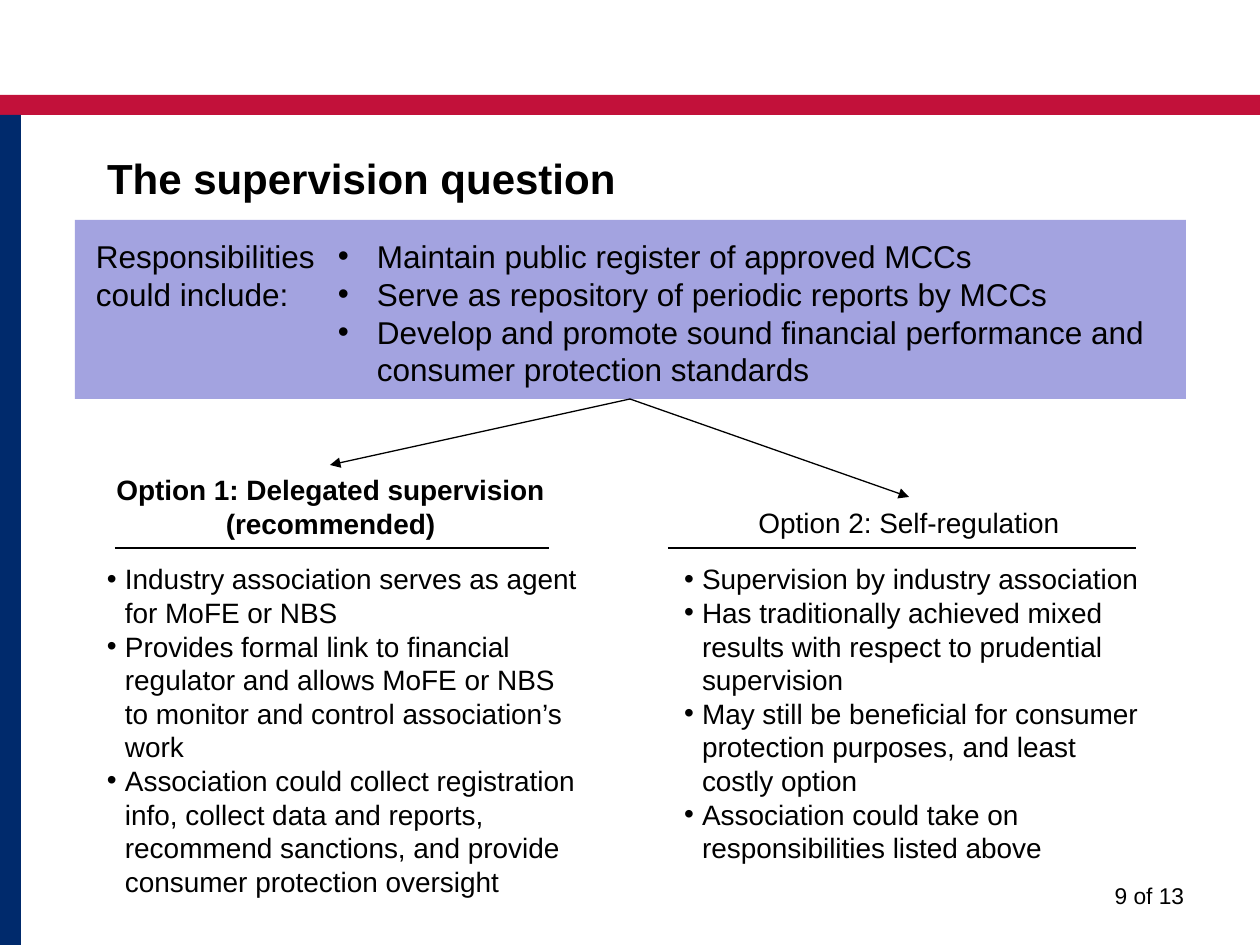
from lxml import etree
from pptx import Presentation
from pptx.dml.color import RGBColor
from pptx.enum.shapes import MSO_CONNECTOR, MSO_SHAPE
from pptx.enum.text import MSO_ANCHOR, PP_ALIGN
from pptx.oxml.ns import qn
from pptx.util import Pt

PX = 914400 / 126
LEFT, CENTER, RIGHT = PP_ALIGN.LEFT, PP_ALIGN.CENTER, PP_ALIGN.RIGHT
TOP, MIDDLE, BOTTOM = MSO_ANCHOR.TOP, MSO_ANCHOR.MIDDLE, MSO_ANCHOR.BOTTOM
RECT, STRAIGHT = MSO_SHAPE.RECTANGLE, MSO_CONNECTOR.STRAIGHT
TITLE_ONLY = 5

RESPONSIBILITIES = [
    "Maintain public register of approved MCCs",
    "Serve as repository of periodic reports by MCCs",
    "Develop and promote sound financial performance and consumer protection standards",
]
DELEGATED = [
    "Industry association serves as agent for MoFE or NBS",
    "Provides formal link to financial regulator and allows MoFE or NBS to monitor "
    "and control association’s work",
    "Association could collect registration info, collect data and reports, recommend "
    "sanctions, and provide consumer protection oversight",
]
SELF_REGULATION = [
    "Supervision by industry association",
    "Has traditionally achieved mixed results with respect to prudential supervision",
    "May still be beneficial for consumer protection purposes, and least costly option",
    "Association could take on responsibilities listed above",
]


def emu(px):
    return round(px * PX)


def rgb(value):
    return RGBColor.from_string(value)


def add_bullet(p, indent):
    """Hang the paragraph's text by indent px behind a round bullet."""
    pPr = p._p.get_or_add_pPr()
    pPr.set("marL", str(emu(indent)))
    pPr.set("indent", str(-emu(indent)))
    etree.SubElement(pPr, qn("a:buFont")).set("typeface", "Arial")
    etree.SubElement(pPr, qn("a:buChar")).set("char", "•")


def write(tf, lines, size=16, bold=False, align=LEFT, anchor=TOP, side=13, indent=0):
    """Fill a frame with one paragraph a line; side is the left and right inset."""
    tf.word_wrap = True
    tf.vertical_anchor = anchor
    tf.margin_left = tf.margin_right = emu(side)
    tf.margin_top = tf.margin_bottom = emu(6)
    for i, line in enumerate(lines):
        p = tf.add_paragraph() if i else tf.paragraphs[0]
        if indent:
            add_bullet(p, indent)
        p.alignment = align
        r = p.add_run()
        r.text = line
        r.font.name = "Arial"
        r.font.size = Pt(size)
        r.font.bold = bold
        r.font.color.rgb = rgb("000000")


class Page:
    def __init__(self, prs):
        self.s = prs.slides.add_slide(prs.slide_layouts[TITLE_ONLY])

    def title(self, text, x, y, w, h):
        sp = self.s.shapes.title
        sp.left, sp.top, sp.width, sp.height = map(emu, (x, y, w, h))
        write(sp.text_frame, [text], size=24, bold=True, anchor=MIDDLE)

    def block(self, x, y, w, h, color):
        sp = self.s.shapes.add_shape(RECT, *map(emu, (x, y, w, h)))
        sp.shadow.inherit = False
        sp.fill.solid()
        sp.fill.fore_color.rgb = rgb(color)
        sp.line.fill.background()

    def text(self, lines, x, y, w, h, **style):
        sp = self.s.shapes.add_textbox(*map(emu, (x, y, w, h)))
        write(sp.text_frame, lines, **style)

    def line(self, x1, y1, x2, y2, width=1.5, arrow=False):
        sp = self.s.shapes.add_connector(STRAIGHT, *map(emu, (x1, y1, x2, y2)))
        sp.line.color.rgb = rgb("000000")
        sp.line.width = Pt(width)
        if arrow:
            etree.SubElement(sp.line._get_or_add_ln(), qn("a:tailEnd")).set("type", "triangle")
        etree.SubElement(sp._element.spPr, qn("a:effectLst"))


def main():
    prs = Presentation()
    prs.slide_width, prs.slide_height = emu(1260), emu(945)
    page = Page(prs)

    page.block(0, 95, 1260, 20, "C2113A")
    page.block(0, 115, 21, 830, "002A6C")
    page.title("The supervision question", 94, 136, 1072, 84)

    page.block(75, 220, 1111, 179, "A3A3E0")
    page.text(["Responsibilities could include:"], 83, 231, 263, 89, size=18)
    page.text(RESPONSIBILITIES, 325, 231, 871, 165, size=18, indent=39)

    for tip in ((330, 465), (909, 497)):
        page.line(630, 399, *tip, width=0.75, arrow=True)

    heading = dict(align=CENTER, anchor=BOTTOM, side=0)
    page.text(["Option 1: Delegated supervision (recommended)"], 112, 465, 437, 81,
              bold=True, **heading)
    page.text(["Option 2: Self-regulation"], 647, 498, 524, 47, **heading)
    for x1, x2 in ((115, 549), (668, 1136)):
        page.line(x1, 548, x2, 548)
    page.text(DELEGATED, 94, 556, 503, 169, indent=18)
    page.text(SELF_REGULATION, 671, 556, 484, 169, indent=18)

    page.text(["9 of 13"], 903, 876, 294, 50, size=13, align=RIGHT)
    prs.save("out.pptx")


if __name__ == "__main__":
    main()
